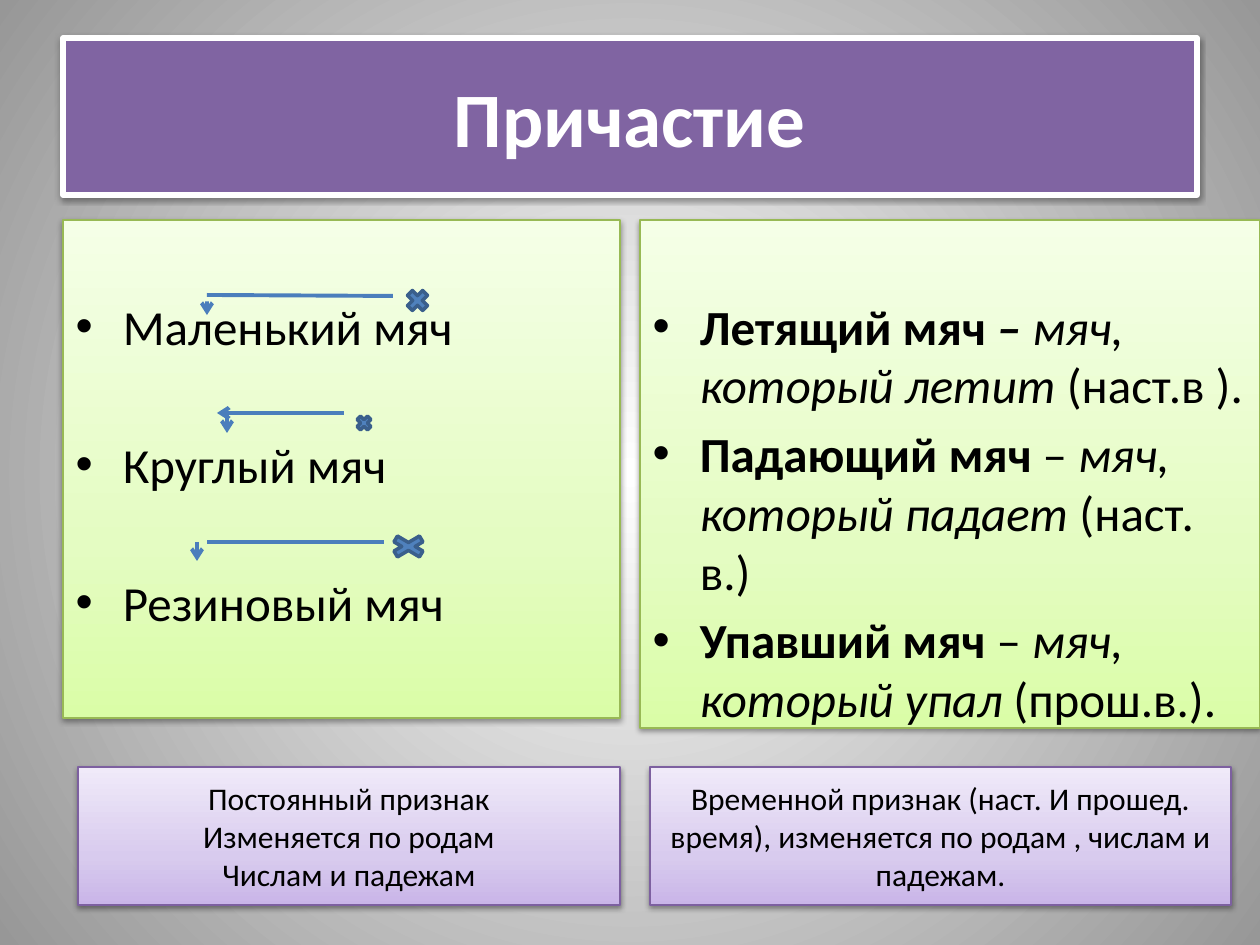
from lxml.etree import SubElement
from pptx import Presentation
from pptx.dml.color import RGBColor
from pptx.enum.shapes import MSO_CONNECTOR, MSO_SHAPE
from pptx.enum.text import MSO_ANCHOR, MSO_AUTO_SIZE, PP_ALIGN
from pptx.oxml.ns import qn
from pptx.util import Emu, Pt

EMU_PER_PX = 914400 / 126
GREEN = [(0, "DAFDA7"), (35, "E4FCC2"), (100, "F5FFE7")]
PURPLE = [(0, "C9B5E8"), (35, "D8CBEE"), (100, "F0EAF9")]
BACKDROP = [(0, "FFFFFF"), (100, "979797")]


def px(n):
    return Emu(round(n * EMU_PER_PX))


def color(value):
    return RGBColor.from_string(value)


def set_gradient(fill, parent, stops, radial=False):
    fill.gradient()
    grad = parent.find(".//" + qn("a:gradFill"))
    for child in list(grad):
        grad.remove(child)
    stop_list = SubElement(grad, qn("a:gsLst"))
    for position, value in stops:
        stop = SubElement(stop_list, qn("a:gs"), pos=str(position * 1000))
        SubElement(stop, qn("a:srgbClr"), val=value)
    if radial:
        circle = SubElement(grad, qn("a:path"), path="circle")
        SubElement(circle, qn("a:fillToRect"), l="50000", t="50000", r="50000", b="50000")
    else:
        SubElement(grad, qn("a:lin"), ang="16200000", scaled="1")


def set_line(s, value, width):
    s.line.color.rgb = color(value)
    s.line.width = Pt(width)


def add_shadow(s):
    s.shadow.inherit = False
    effects = s.element.spPr.find(qn("a:effectLst"))
    shadow = SubElement(effects, qn("a:outerShdw"), blurRad="40000", dist="20000",
                        dir="5400000", rotWithShape="0")
    black = SubElement(shadow, qn("a:srgbClr"), val="000000")
    SubElement(black, qn("a:alpha"), val="38000")


def place(s, box):
    s.left, s.top, s.width, s.height = (px(n) for n in box)


def style_panel(s, stops, line):
    set_gradient(s.fill, s.element.spPr, stops)
    set_line(s, line, 0.75)
    add_shadow(s)


def write(s, paragraphs, size, ink="000000", align=None, anchor=None, gap=0, top=6):
    tf = s.text_frame
    tf.word_wrap = True
    tf.auto_size = MSO_AUTO_SIZE.NONE
    tf.margin_top = px(top)
    if anchor is not None:
        tf.vertical_anchor = anchor
    for i, runs in enumerate(paragraphs):
        p = tf.paragraphs[0] if i == 0 else tf.add_paragraph()
        p.space_before = Pt(gap if i else 0)
        if align is not None:
            p.alignment = align
        for text, style in runs:
            r = p.add_run()
            r.text = text
            r.font.name = "Calibri"
            r.font.size = Pt(size)
            r.font.color.rgb = color(ink)
            r.font.bold = "b" in style
            r.font.italic = "i" in style


def add_title(slide):
    s = slide.shapes.title
    place(s, (63, 38, 1134, 157))
    s.fill.solid()
    s.fill.fore_color.rgb = color("8064A2")
    set_line(s, "FFFFFF", 3)
    add_shadow(s)
    write(s, [[("Причастие", "b")]], 44, ink="FFFFFF",
          align=PP_ALIGN.CENTER, anchor=MSO_ANCHOR.MIDDLE)


def add_list(s, box, paragraphs, gap):
    place(s, box)
    style_panel(s, GREEN, "98B955")
    write(s, paragraphs, 28, gap=gap, top=76)


def add_note(slide, box, lines):
    s = slide.shapes.add_shape(MSO_SHAPE.RECTANGLE, *(px(n) for n in box))
    style_panel(s, PURPLE, "7D60A0")
    write(s, [[(line, "")] for line in lines], 18,
          align=PP_ALIGN.CENTER, anchor=MSO_ANCHOR.MIDDLE)


def add_cross(slide, box):
    s = slide.shapes.add_shape(MSO_SHAPE.MATH_MULTIPLY, *(px(n) for n in box))
    s.shadow.inherit = False
    s.fill.solid()
    s.fill.fore_color.rgb = color("4F81BD")
    set_line(s, "3A5F8C", 2)


def add_stroke(slide, ends, arrow=False):
    s = slide.shapes.add_connector(MSO_CONNECTOR.STRAIGHT, *(px(n) for n in ends))
    set_line(s, "4B7EBC", 2.25)
    if arrow:
        SubElement(s.element.spPr.find(qn("a:ln")), qn("a:tailEnd"), type="arrow")
    SubElement(s.element.spPr, qn("a:effectLst"))


def main():
    prs = Presentation()
    prs.slide_width, prs.slide_height = px(1260), px(945)
    slide = prs.slides.add_slide(prs.slide_layouts[3])
    set_gradient(slide.background.fill, slide.element, BACKDROP, radial=True)

    add_title(slide)
    add_list(slide.placeholders[2], (640, 220, 620, 508), [
        [("Летящий мяч ", "b"), ("– ", "bi"), ("мяч, который летит ", "i"), ("(наст.в ).", "")],
        [("Падающий мяч ", "b"), ("– ", ""), ("мяч, который падает", "i"), (" (наст. в.)", "")],
        [("Упавший мяч ", "b"), ("– ", ""), ("мяч, который упал ", "i"), ("(прош.в.).", "")],
    ], gap=5.6)
    add_list(slide.placeholders[1], (63, 220, 557, 498), [
        [("Маленький мяч", "")], [("Круглый мяч", "")], [("Резиновый мяч", "")],
    ], gap=45.4)

    links = [
        ((403, 286, 29, 29), (393, 296, 207, 295), False, (207, 305, 207, 315)),
        ((354, 413, 20, 20), (344, 413, 217, 413), True, (227, 413, 227, 433)),
        ((384, 532, 49, 29), (384, 542, 207, 542), False, (197, 542, 197, 561)),
    ]
    for cross, bar, bar_arrow, pointer in links:
        add_cross(slide, cross)
        add_stroke(slide, bar, arrow=bar_arrow)
        add_stroke(slide, pointer, arrow=True)

    add_note(slide, (78, 767, 542, 138),
             ["Постоянный признак", "Изменяется по родам", "Числам и падежам"])
    add_note(slide, (650, 767, 581, 138),
             ["Временной признак (наст. И прошед. время), изменяется по родам , числам и падежам."])
    prs.save("out.pptx")


if __name__ == "__main__":
    main()
